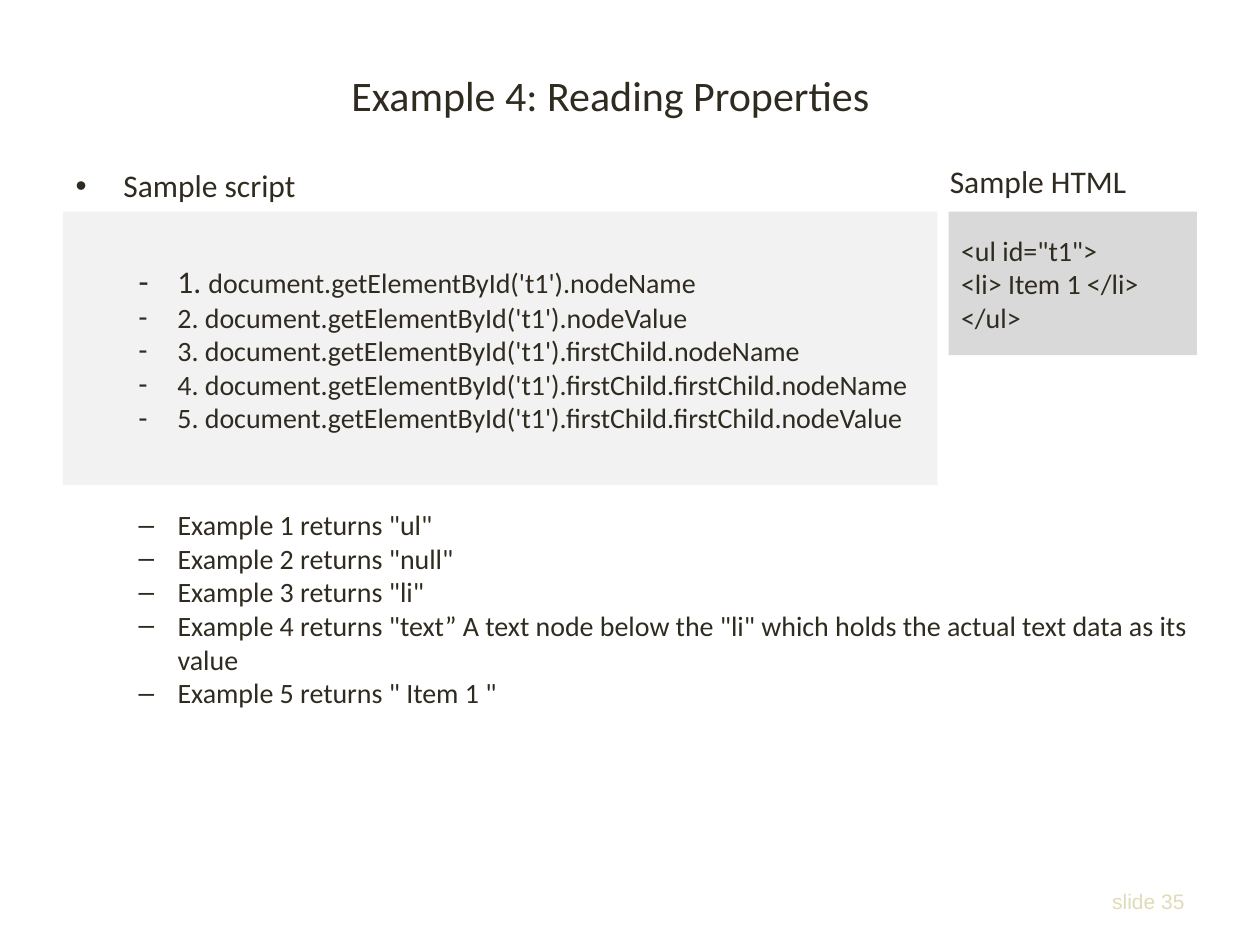
"""Build the slide "Example 4: Reading Properties"."""
from lxml import etree
from pptx import Presentation
from pptx.dml.color import RGBColor
from pptx.enum.shapes import MSO_SHAPE
from pptx.enum.text import MSO_ANCHOR, MSO_AUTO_SIZE, PP_ALIGN
from pptx.oxml.ns import qn
from pptx.util import Inches, Pt

INK = RGBColor(0x2F, 0x2B, 0x20)
SAND = RGBColor(0xDF, 0xDC, 0xB7)
LIGHT = RGBColor(0xF2, 0xF2, 0xF2)
GREY = RGBColor(0xD9, 0xD9, 0xD9)

SCRIPT = ["nodeName", "nodeValue", "firstChild.nodeName",
          "firstChild.firstChild.nodeName", "firstChild.firstChild.nodeValue"]
HTML = ['<ul id="t1">', "<li> Item 1 </li>", "</ul>"]
RESULTS = ['"ul"', '"null"', '"li"',
           '"text” A text node below the "li" which holds the actual text data as its value',
           '" Item 1 "']


def style(p, size, color=INK, font="Calibri"):
    for r in p.runs:
        r.font.size = Pt(size)
        r.font.name = font
        r.font.color.rgb = color


def bullet(p, char, left, hang):
    pPr = p._p.get_or_add_pPr()
    pPr.set("marL", str(Inches(left)))
    pPr.set("indent", str(Inches(-hang)))
    etree.SubElement(pPr, qn("a:buFont")).set("typeface", "Arial")
    etree.SubElement(pPr, qn("a:buChar")).set("char", char)


prs = Presentation()
prs.slide_width, prs.slide_height = Inches(10), Inches(7.5)
s = prs.slides.add_slide(prs.slide_layouts[1])

title, body = s.placeholders
for sp, box in ((title, (0.44, 0.25, 8.81, 1)), (body, (0.5, 1.27, 9.42, 5.33))):
    sp.left, sp.top, sp.width, sp.height = map(Inches, box)
    sp.text_frame.auto_size = MSO_AUTO_SIZE.NONE

title.text_frame.text = "Example 4: Reading Properties"
style(title.text_frame.paragraphs[0], 24)

tf = body.text_frame
tf.text = "Sample script"
p = tf.paragraphs[0]
p.space_before = Pt(0)
bullet(p, "•", 0.38, 0.38)
style(p, 18)
for i, result in enumerate(RESULTS, 1):
    p = tf.add_paragraph()
    p.text = f"Example {i} returns {result}"
    p.level = 1
    p.space_before = Pt(173.5 if i == 1 else 0)
    bullet(p, "–", 0.81, 0.31)
    style(p, 16)

frames = []
for left, width, height, fill in ((0.5, 6.94, 2.17, LIGHT), (7.53, 1.97, 1.14, GREY)):
    sp = s.shapes.add_shape(MSO_SHAPE.RECTANGLE, Inches(left), Inches(1.68),
                            Inches(width), Inches(height))
    sp.shadow.inherit = False
    sp.fill.solid()
    sp.fill.fore_color.rgb = fill
    sp.line.fill.background()
    sp.text_frame.word_wrap = False
    sp.text_frame.vertical_anchor = MSO_ANCHOR.MIDDLE
    frames.append(sp.text_frame)
script_tf, html_tf = frames

for i, member in enumerate(SCRIPT, 1):
    p = script_tf.paragraphs[0] if i == 1 else script_tf.add_paragraph()
    p.alignment = PP_ALIGN.LEFT
    p.level = 1
    for text in (f"{i}. ", f"document.getElementById('t1').{member}"):
        p.add_run().text = text
    bullet(p, "-", 0.81, 0.31)
    style(p, 16)
script_tf.paragraphs[0].runs[0].font.size = Pt(18)

html_tf.text = "\n".join(HTML)
for p in html_tf.paragraphs:
    p.alignment = PP_ALIGN.LEFT
    style(p, 16)

tf = s.shapes.add_textbox(Inches(7.44), Inches(1.27), Inches(2.44), Inches(0.37)).text_frame
tf.word_wrap = True
tf.auto_size = MSO_AUTO_SIZE.SHAPE_TO_FIT_TEXT
tf.text = "Sample HTML"
tf.paragraphs[0].line_spacing = 0.9
style(tf.paragraphs[0], 18)

tf = s.shapes.add_textbox(Inches(7.17), Inches(6.95), Inches(2.33), Inches(0.4)).text_frame
tf.word_wrap = True
tf.vertical_anchor = MSO_ANCHOR.MIDDLE
tf.text = "slide 35"
tf.paragraphs[0].alignment = PP_ALIGN.RIGHT
style(tf.paragraphs[0], 12, SAND, "Arial")

prs.save("out.pptx")
